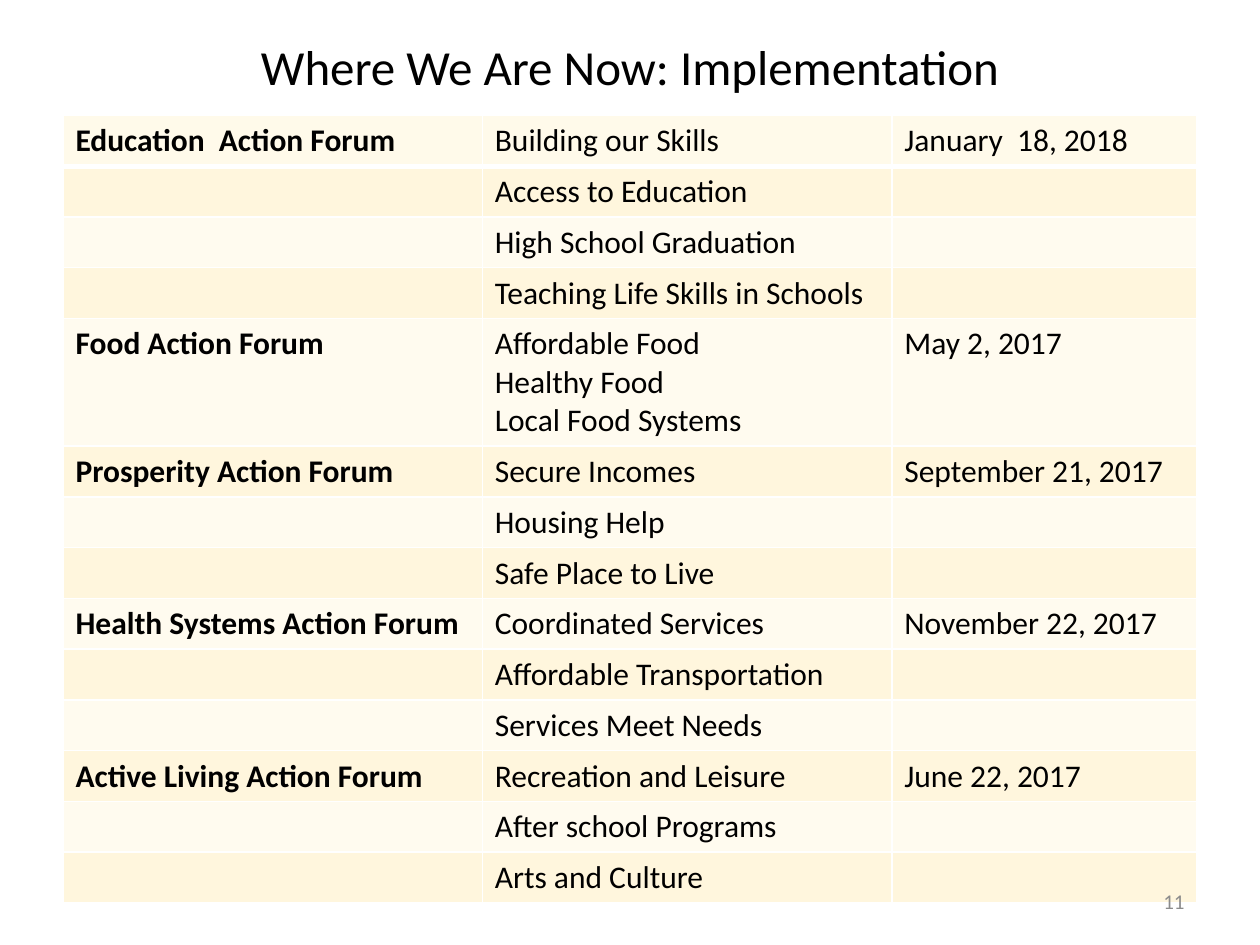
from lxml import etree
from pptx import Presentation
from pptx.dml.color import RGBColor
from pptx.enum.text import MSO_ANCHOR, PP_ALIGN
from pptx.oxml.ns import qn
from pptx.util import Pt

CENTER, RIGHT = PP_ALIGN.CENTER, PP_ALIGN.RIGHT
MIDDLE = MSO_ANCHOR.MIDDLE

FONT = "Calibri"
BLACK, GREY, WHITE = "000000", "8C8C8C", "FFFFFF"
HEADER_FILL, DARK_BAND, LIGHT_BAND = "FFFAEA", "FFF6DD", "FFFBEF"
COLUMN_WIDTHS = [239.6, 234, 174.4]
LINE_HEIGHT, CELL_PADDING = 22, 7

# Forum, date, and the topics of each table row
FORUMS = [
    ("Education  Action Forum", "January  18, 2018",
     ["Building our Skills", "Access to Education", "High School Graduation",
      "Teaching Life Skills in Schools"]),
    ("Food Action Forum", "May 2, 2017",
     ["Affordable Food\nHealthy Food\nLocal Food Systems"]),
    ("Prosperity Action Forum", "September 21, 2017",
     ["Secure Incomes", "Housing Help", "Safe Place to Live"]),
    ("Health Systems Action Forum", "November 22, 2017",
     ["Coordinated Services", "Affordable Transportation", "Services Meet Needs"]),
    ("Active Living Action Forum", "June 22, 2017",
     ["Recreation and Leisure", "After school Programs", "Arts and Culture"]),
]


def color(hex_string):
    return RGBColor.from_string(hex_string)


def write_text(frame, text, hex_color=BLACK, align=None, **font_format):
    """Write one paragraph per line of text."""
    font_format = {"name": FONT, "size": Pt(18), "bold": False, **font_format}
    frame.text = text
    for para in frame.paragraphs:
        para.alignment = align
        for span in para.runs:
            for name, value in font_format.items():
                setattr(span.font, name, value)
            span.font.color.rgb = color(hex_color)


def add_text_box(page, left, top, width, height, text, **text_format):
    box = page.shapes.add_textbox(Pt(left), Pt(top), Pt(width), Pt(height))
    box.text_frame.word_wrap = True
    box.text_frame.vertical_anchor = MIDDLE
    write_text(box.text_frame, text, **text_format)


def set_borders(cell, widths):
    """Draw white cell borders; their elements precede the fill."""
    properties = cell._tc.get_or_add_tcPr()
    for index, (side, width) in enumerate(widths.items()):
        line = etree.Element(qn(f"a:{side}"), w=str(Pt(width)))
        fill = etree.SubElement(line, qn("a:solidFill"))
        etree.SubElement(fill, qn("a:srgbClr"), val=WHITE)
        properties.insert(index, line)


def forum_rows():
    """Name the forum and its date only beside its first topic."""
    return [
        (forum, topic, date) if index == 0 else ("", topic, "")
        for forum, date, topics in FORUMS
        for index, topic in enumerate(topics)
    ]


def row_fill(row_index):
    if row_index == 0:
        return HEADER_FILL
    return DARK_BAND if row_index % 2 else LIGHT_BAND


def add_forum_table(page, left, top):
    rows = forum_rows()
    heights = [LINE_HEIGHT * (topic.count("\n") + 1) + CELL_PADDING
               for _, topic, _ in rows]
    table = page.shapes.add_table(
        len(rows), len(COLUMN_WIDTHS), Pt(left), Pt(top),
        Pt(sum(COLUMN_WIDTHS)), Pt(sum(heights))).table
    table.first_row = table.horz_banding = False
    for column, width in zip(table.columns, COLUMN_WIDTHS):
        column.width = Pt(width)

    for row_index, texts in enumerate(rows):
        table.rows[row_index].height = Pt(heights[row_index])
        # A thick line parts the first row from the second
        widths = {"lnL": 1, "lnR": 1,
                  "lnT": 3 if row_index == 1 else 1,
                  "lnB": 3 if row_index == 0 else 1}
        for column_index, text in enumerate(texts):
            cell = table.cell(row_index, column_index)
            cell.fill.solid()
            cell.fill.fore_color.rgb = color(row_fill(row_index))
            set_borders(cell, widths)
            if text:
                write_text(cell.text_frame, text, bold=column_index == 0)


def main():
    deck = Presentation()
    deck.slide_width, deck.slide_height = Pt(720), Pt(540)
    page = deck.slides.add_slide(deck.slide_layouts[6])

    # Title
    add_text_box(page, 36, 12.24, 648, 50.4, "Where We Are Now: Implementation",
                 align=CENTER, size=Pt(28))
    # Forums, topics and dates
    add_forum_table(page, 36, 66)
    # Page number
    add_text_box(page, 516, 500.5, 168, 28.75, "11",
                 hex_color=GREY, align=RIGHT, size=Pt(12))

    deck.save("out.pptx")


if __name__ == "__main__":
    main()
